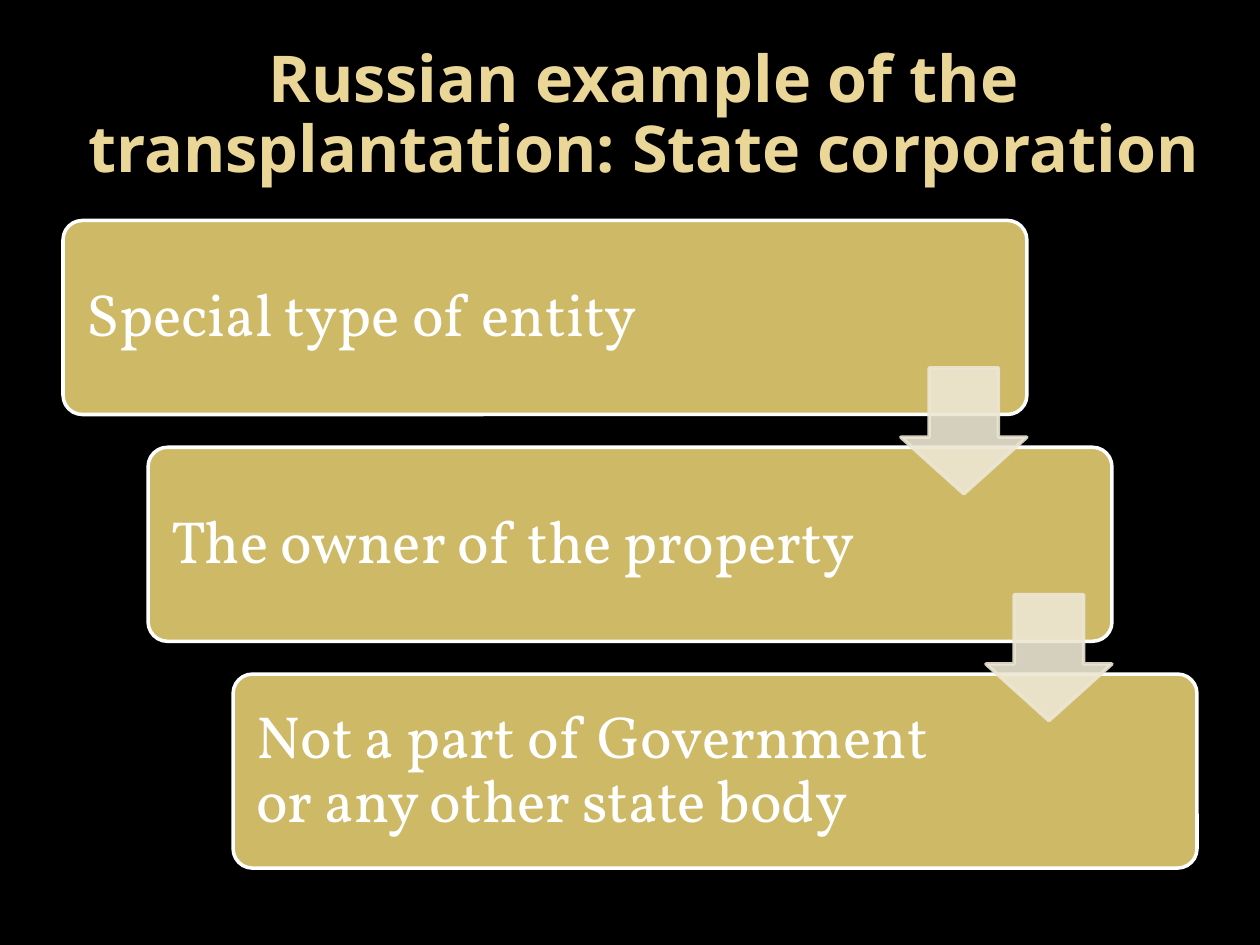
"""Build a slide with three stepped boxes linked by down arrows."""
import dataclasses

import lxml.etree
import pptx
import pptx.dml.color
import pptx.enum.shapes
import pptx.enum.text
import pptx.oxml.ns
import pptx.util

SHAPE = pptx.enum.shapes.MSO_SHAPE
ALIGN = pptx.enum.text.PP_ALIGN
MID = pptx.enum.text.MSO_ANCHOR.MIDDLE


@dataclasses.dataclass(frozen=True)
class Theme:
    """Colours, fonts and type sizes of the slide."""
    back: str = "000000"
    head: str = "EAD696"
    box: str = "CEB966"
    text: str = "FFFFFF"
    arrow: str = "EDE6D3"
    alpha: int = 90
    edge: float = 2
    headfont: str = "Noto Sans"
    bodyfont: str = "Vollkorn"
    headsize: float = 36.9
    bodysize: float = 34
    lead: float = 0.9


THEME = Theme()
WIDE, HIGH = pptx.util.Inches(10), pptx.util.Inches(7.5)
COLS, ROWS = 200, 150
LEFT, TOP, BOXWIDE, BOXHIGH = 10, 35, 153, 30.8
STEPX, STEPY = 13.5, 36
ARROW, LIFT = 20, 12.6
PAD, RIGHTPAD = 2.8, 36
STEPS = [
    "Special type of entity",
    "The owner of the property",
    "Not a part of Government or any other state body",
]


def col(num):
    """Turn grid columns into a length."""
    return round(num * WIDE / COLS)


def row(num):
    """Turn grid rows into a length."""
    return round(num * HIGH / ROWS)


def place(left, top, wide, high):
    """Turn a grid area into a position and size."""
    return col(left), row(top), col(wide), row(high)


def tint(color):
    """Make a colour from its hex code."""
    return pptx.dml.color.RGBColor.from_string(color)


def write(frame, words, font, size, color, align, bold=False):
    """Write one wrapped paragraph, centred in height."""
    frame.word_wrap = True
    frame.vertical_anchor = MID
    para = frame.paragraphs[0]
    para.alignment = align
    para.line_spacing = THEME.lead
    run = para.add_run()
    run.text = words
    run.font.name = font
    run.font.size = pptx.util.Pt(size)
    run.font.bold = bold
    run.font.color.rgb = tint(color)


def draw(slide, kind, area, adjust, fill, line):
    """Add a filled and outlined shape without a shadow."""
    shape = slide.shapes.add_shape(kind, *place(*area))
    for num, part in enumerate(adjust):
        shape.adjustments[num] = part
    shape.shadow.inherit = False
    shape.fill.solid()
    shape.fill.fore_color.rgb = tint(fill)
    shape.line.color.rgb = tint(line)
    shape.line.width = pptx.util.Pt(THEME.edge)
    return shape


def fade(shape, share):
    """Set the opacity of fill and line in percent."""
    name = pptx.oxml.ns.qn("a:srgbClr")
    for color in shape.element.spPr.iter(name):
        alpha = lxml.etree.SubElement(color, pptx.oxml.ns.qn("a:alpha"))
        alpha.set("val", str(share * 1000))


def title(slide, words):
    """Add the heading."""
    box = slide.shapes.add_textbox(*place(10, 6, 184.4, 25))
    write(box.text_frame, words, THEME.headfont, THEME.headsize,
          THEME.head, ALIGN.CENTER, True)


def step(slide, num, words):
    """Add one box of the stair."""
    area = LEFT + num * STEPX, TOP + num * STEPY, BOXWIDE, BOXHIGH
    box = draw(slide, SHAPE.ROUNDED_RECTANGLE, area, [0.1],
               THEME.box, THEME.text)
    frame = box.text_frame
    frame.margin_left, frame.margin_right = col(PAD), col(RIGHTPAD)
    frame.margin_top = frame.margin_bottom = row(PAD)
    write(frame, words, THEME.bodyfont, THEME.bodysize,
          THEME.text, ALIGN.LEFT)


def arrow(slide, num):
    """Add the arrow from one box down to the next."""
    left = LEFT + num * STEPX + BOXWIDE - ARROW
    top = TOP + (num + 1) * STEPY - LIFT
    shape = draw(slide, SHAPE.DOWN_ARROW, (left, top, ARROW, ARROW),
                 [0.55, 0.45], THEME.arrow, THEME.arrow)
    fade(shape, THEME.alpha)


def main():
    """Build and save the slide."""
    deck = pptx.Presentation()
    deck.slide_width, deck.slide_height = WIDE, HIGH
    slide = deck.slides.add_slide(deck.slide_layouts[6])
    slide.background.fill.solid()
    slide.background.fill.fore_color.rgb = tint(THEME.back)
    title(slide, "Russian example of the transplantation: State corporation")
    for num, words in enumerate(STEPS):
        step(slide, num, words)
    for num in range(len(STEPS) - 1):
        arrow(slide, num)
    deck.save("out.pptx")


if __name__ == "__main__":
    main()
